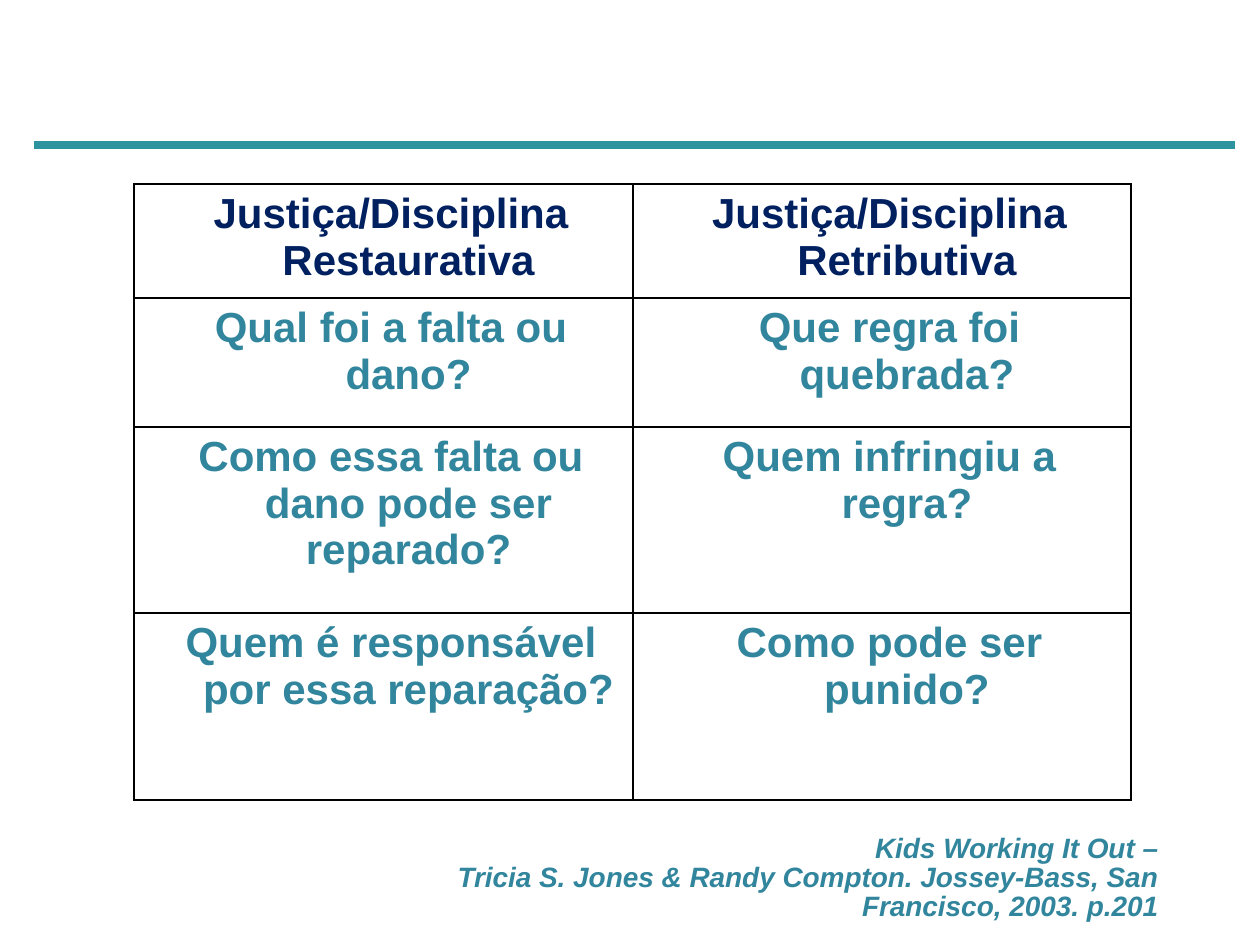
from pptx import Presentation
from pptx.dml.color import RGBColor as RGB
from pptx.enum.shapes import MSO_CONNECTOR as CONN
from pptx.enum.text import PP_ALIGN as ALIGN
from pptx.oxml import parse_xml
from pptx.oxml.ns import nsdecls
from pptx.util import Pt

PX = 914400 // 126  # EMU per px
COLORS = {"rule": "2D949F", "head": "002060", "body": "31859C", "border": "000000"}


def add_run(p, text, size, color, italic=False):
    r = p.add_run()
    r.text = text
    f = r.font
    f.name, f.size, f.bold, f.italic = "Arial", Pt(size), True, italic
    f.color.rgb = RGB.from_string(COLORS[color])


def set_indent(p, left, first=0):
    pPr = p._p.get_or_add_pPr()
    pPr.set("marL", str(left * PX))
    pPr.set("indent", str(first * PX))


prs = Presentation()
prs.slide_width, prs.slide_height = 1260 * PX, 945 * PX
s = prs.slides.add_slide(prs.slide_layouts[6])

# Rule under the title area
rule = s.shapes.add_connector(CONN.STRAIGHT, 34 * PX, 145 * PX, 1235 * PX, 145 * PX)
rule.line.color.rgb = RGB.from_string(COLORS["rule"])
rule.line.width = Pt(4.5)
rule._element.spPr.append(parse_xml(f"<a:effectLst {nsdecls('a')}/>"))

# Comparison table
rows = [
    ("Justiça/Disciplina Restaurativa", "Justiça/Disciplina Retributiva"),
    ("Qual foi a falta ou dano?", "Que regra foi quebrada?"),
    ("Como essa falta ou dano pode ser reparado?", "Quem infringiu a regra?"),
    ("Quem é responsável por essa reparação?", "Como pode ser punido?"),
]
widths = [499, 498]
heights = [114, 129, 186, 187]
table = s.shapes.add_table(len(rows), len(widths), 134 * PX, 184 * PX,
                           sum(widths) * PX, sum(heights) * PX).table
table.first_row = table.horz_banding = False
for col, w in zip(table.columns, widths):
    col.width = w * PX
for i, (texts, h) in enumerate(zip(rows, heights)):
    table.rows[i].height = h * PX
    for j, text in enumerate(texts):
        cell = table.cell(i, j)
        p = cell.text_frame.paragraphs[0]
        p.alignment = ALIGN.CENTER
        set_indent(p, 50, -35)
        add_run(p, text, 24, "body" if i else "head")
        cell.fill.background()
        # Borders go before the fill in the cell properties
        tcPr = cell._tc.get_or_add_tcPr()
        for k, side in enumerate(("lnL", "lnR", "lnT", "lnB")):
            tcPr.insert(k, parse_xml(
                f'<a:{side} {nsdecls("a")} w="{Pt(1)}"><a:solidFill>'
                f'<a:srgbClr val="{COLORS["border"]}"/></a:solidFill></a:{side}>'))

# Source reference
tf = s.shapes.add_textbox(95 * PX, 829 * PX, 1076 * PX, 118 * PX).text_frame
tf.word_wrap = True
p = tf.paragraphs[0]
p.alignment = ALIGN.RIGHT
p.line_spacing = 0.86
set_indent(p, 252)
add_run(p, "Kids Working It Out –", 16, "body", italic=True)
p.add_line_break()
add_run(p, "Tricia S. Jones & Randy Compton. Jossey-Bass, San Francisco, 2003. p.201",
        16, "body", italic=True)

prs.save("out.pptx")
